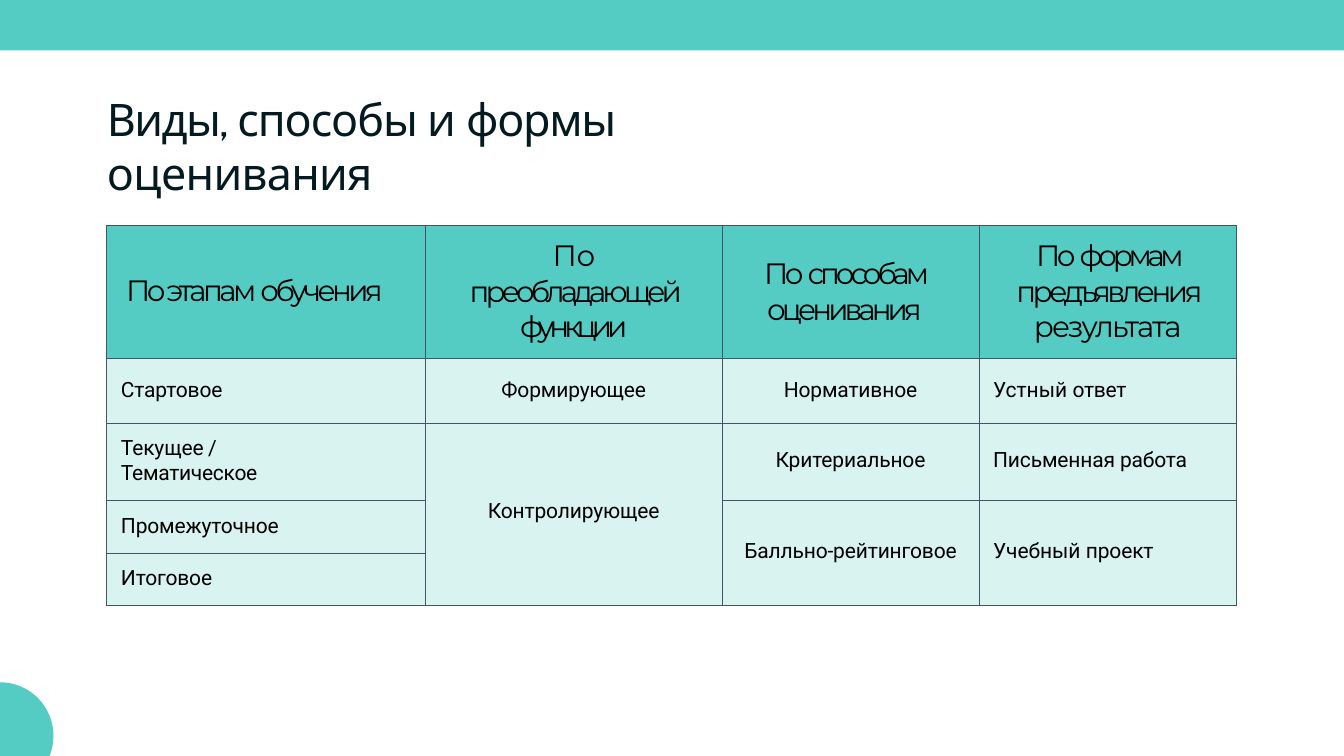
import math
from dataclasses import dataclass

import lxml.etree
import pptx
import pptx.dml.color
import pptx.enum.text
import pptx.oxml.ns
import pptx.util

WIDTH, HEIGHT = 13.33, 7.5
COLORS = {"teal": "55CCC3", "mint": "D9F3F0", "border": "44536A", "title": "041A21", "text": "000000"}
LEFT = pptx.enum.text.PP_ALIGN.LEFT
CENTER = pptx.enum.text.PP_ALIGN.CENTER
COL_SHARES = (23.71, 22.06, 19.13, 19.13)
ROW_SHARES = (17.6, 8.53, 10.27, 6.93, 6.93)
HEADER_ROW = 0

Runs = tuple[tuple[str, float], ...]


@dataclass(frozen=True)
class TextStyle:
    font: str
    size: float
    color: str


@dataclass(frozen=True)
class Entry:
    row: int
    col: int
    runs: Runs
    top: float
    left: float = 0
    right: float = 0
    align: int = CENTER
    span: int = 1


TITLE_STYLE = TextStyle("Cabin", 32, "title")
HEADER_STYLE = TextStyle("Montserrat", 21, "text")
BODY_STYLE = TextStyle("Roboto", 15, "text")

TITLE: Runs = (("Виды, ", -1.2), ("способы ", -0.8), ("и ", 0), ("формы ", -1), ("оценивания", -0.5))
ENTRIES = (
    Entry(0, 0, (("По этапам ", -2.5), ("обучения", -2.6)), 6.27, left=1.43, align=LEFT),
    Entry(0, 1, (("По ", -0.2), ("преобладающей ", -2.8), ("функции", -3.5)), 1.6, 2.55, 2.55),
    Entry(0, 2, (("По ", -2.5), ("способам ", -2.9), ("оценивания", -2.8)), 4, right=0.9),
    Entry(0, 3, (("По ", -2.5), ("формам ", -3.1), ("предъявления ", -2.5), ("результата", -1.4)),
          1.6, 2.18, 2.18),
    Entry(1, 0, (("Стартовое", -0.1),), 2.53, left=1.05, align=LEFT),
    Entry(1, 1, (("Формирующее", -0.1),), 2.53),
    Entry(1, 2, (("Нормативное", -0.1),), 2.53),
    Entry(1, 3, (("Устный ", 0), ("ответ", -0.2)), 2.53, left=1.05, align=LEFT),
    Entry(2, 0, (("Текущее", -0.1), (" / ", -0.5), ("Тематическое", -0.2)), 1.73, 1.05, 7.5, LEFT),
    Entry(2, 1, (("Контролирующее", -0.1),), 10, span=3),
    Entry(2, 2, (("Критериальное", -0.1),), 3.33),
    Entry(2, 3, (("Письменная работа", -0.1),), 3.33, left=1.05, align=LEFT),
    Entry(3, 0, (("Промежуточное", -0.1),), 1.73, left=1.05, align=LEFT),
    Entry(3, 2, (("Балльно-рейтинговое", -0.1),), 5.07, span=2),
    Entry(3, 3, (("Учебный ", 0), ("проект", -0.1)), 5.07, left=1.05, align=LEFT, span=2),
    Entry(4, 0, (("Итоговое", -0.1),), 1.73, left=1.05, align=LEFT),
)


def across(percent: float) -> int:
    return pptx.util.Inches(WIDTH * percent / 100)


def down(percent: float) -> int:
    return pptx.util.Inches(HEIGHT * percent / 100)


def rgb(name: str) -> pptx.dml.color.RGBColor:
    return pptx.dml.color.RGBColor.from_string(COLORS[name])


def write_runs(p, runs: Runs, style: TextStyle) -> None:
    for text, spacing in runs:
        r = p.add_run()
        r.text = text
        r.font.name = style.font
        r.font.size = pptx.util.Pt(style.size)
        r.font.color.rgb = rgb(style.color)
        r._r.get_or_add_rPr().set("spc", str(round(spacing * 100)))


def style_cell(cell, fill: str) -> None:
    tc_pr = cell._tc.get_or_add_tcPr()
    qn = pptx.oxml.ns.qn
    for side in ("lnL", "lnR", "lnT", "lnB"):
        ln = lxml.etree.SubElement(tc_pr, qn(f"a:{side}"), w=str(pptx.util.Pt(0.75)))
        solid = lxml.etree.SubElement(ln, qn("a:solidFill"))
        lxml.etree.SubElement(solid, qn("a:srgbClr"), val=COLORS["border"])
    cell.fill.solid()
    cell.fill.fore_color.rgb = rgb(fill)


def fill_entry(table, entry: Entry) -> None:
    cell = table.cell(entry.row, entry.col)
    if entry.span > 1:
        cell.merge(table.cell(entry.row + entry.span - 1, entry.col))
    cell.margin_left, cell.margin_right = across(entry.left), across(entry.right)
    cell.margin_top, cell.margin_bottom = down(entry.top), 0
    p = cell.text_frame.paragraphs[0]
    p.alignment = entry.align
    write_runs(p, entry.runs, HEADER_STYLE if entry.row == HEADER_ROW else BODY_STYLE)


def add_assessment_table(slide) -> None:
    frame = slide.shapes.add_table(len(ROW_SHARES), len(COL_SHARES), across(7.95), down(29.87),
                                   across(sum(COL_SHARES)), down(sum(ROW_SHARES)))
    table = frame.table
    for column, share in zip(table.columns, COL_SHARES):
        column.width = across(share)
    for i, (row, share) in enumerate(zip(table.rows, ROW_SHARES)):
        row.height = down(share)
        for cell in row.cells:
            style_cell(cell, "teal" if i == HEADER_ROW else "mint")
    for entry in ENTRIES:
        fill_entry(table, entry)


def paint(sp) -> None:
    sp.shadow.inherit = False
    sp.fill.solid()
    sp.fill.fore_color.rgb = rgb("teal")
    sp.line.fill.background()


def add_top_band(slide) -> None:
    paint(slide.shapes.add_shape(pptx.enum.shapes.MSO_SHAPE.RECTANGLE, 0, 0, across(100), down(6.67)))


def add_corner_disc(slide) -> None:
    radius, center_y, steps = across(3.98), down(97.33), 36
    low = math.asin((down(100) - center_y) / radius)
    angles = [-math.pi / 2 + i * (low + math.pi / 2) / steps for i in range(steps + 1)]
    arc = [(round(radius * math.cos(a)), round(center_y + radius * math.sin(a))) for a in angles]
    builder = slide.shapes.build_freeform(0, down(100))
    builder.add_line_segments(arc, close=True)
    paint(builder.convert_to_shape())


def add_title(slide) -> None:
    tf = slide.shapes.add_textbox(across(7.95), down(12.13), across(50.7), down(14.5)).text_frame
    tf.word_wrap = True
    tf.margin_left = tf.margin_top = tf.margin_right = tf.margin_bottom = 0
    write_runs(tf.paragraphs[0], TITLE, TITLE_STYLE)


def main() -> None:
    """Build the slide on types, methods and forms of assessment."""
    prs = pptx.Presentation()
    prs.slide_width, prs.slide_height = across(100), down(100)
    slide = prs.slides.add_slide(prs.slide_layouts[6])
    add_assessment_table(slide)
    add_top_band(slide)
    add_title(slide)
    add_corner_disc(slide)
    prs.save("out.pptx")


if __name__ == "__main__":
    main()
